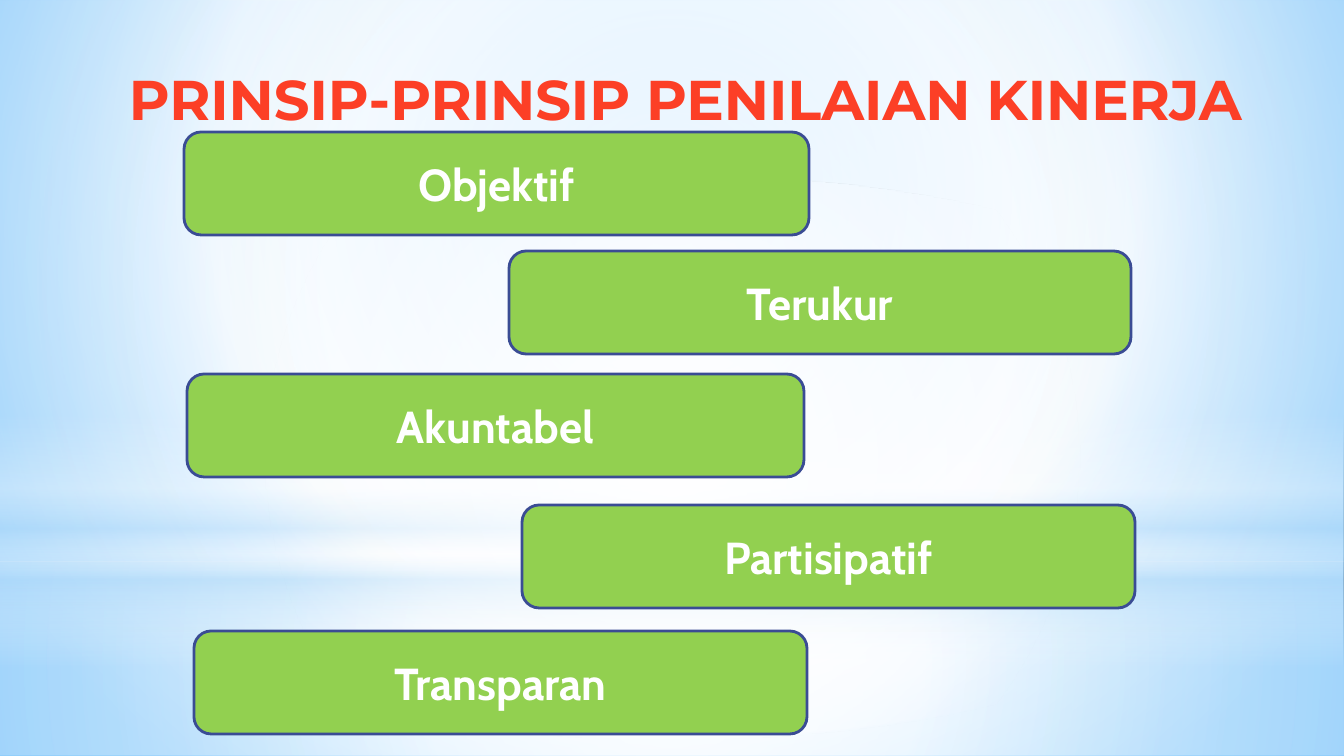
from lxml import etree
from pptx import Presentation
from pptx.dml.color import RGBColor
from pptx.enum.shapes import MSO_SHAPE
from pptx.enum.text import MSO_ANCHOR, PP_ALIGN
from pptx.oxml.ns import qn
from pptx.util import Emu, Pt

RECTANGLE = MSO_SHAPE.RECTANGLE
ROUNDED = MSO_SHAPE.ROUNDED_RECTANGLE
OVAL = MSO_SHAPE.OVAL
CENTER = PP_ALIGN.CENTER
MIDDLE = MSO_ANCHOR.MIDDLE
BOTTOM = MSO_ANCHOR.BOTTOM

EMU_PER_PX = 914400 / 100.8
WIDTH, HEIGHT = 1344, 756
CARD_HEIGHT = 103
CENTERED = (50, 50, 50, 50)

GLOWS = [
    (RECTANGLE, (0, 562, WIDTH, 194),
     [(0, "FFFFFF", 91), (37, "FFFFFF", 76), (100, "B4DCFA", 79)], CENTERED),
    (RECTANGLE, (0, 0, WIDTH, 562),
     [(0, "FFFFFF", 89), (48, "FFFFFF", 62), (100, "B4DCFA", 79)], CENTERED),
    (RECTANGLE, (0, 415, WIDTH, 252),
     [(0, "FFFFFF", 0), (29, "FFFFFF", 30), (45, "B4DCFA", 40),
      (55, "FFFFFF", 26), (65, "B4DCFA", 60), (100, "FFFFFF", 0)], None),
    (OVAL, (0, 176, WIDTH, 562),
     [(0, "FFFFFF", 100), (56, "FFFFFF", 0)], CENTERED),
]

PRINCIPLES = [
    ("Objektif", 184, 132, 625),
    ("Terukur", 509, 251, 622),
    ("Akuntabel", 187, 374, 617),
    ("Partisipatif", 522, 505, 613),
    ("Transparan", 194, 631, 613),
]


def px(length):
    return Emu(round(length * EMU_PER_PX))


def color(value):
    return RGBColor.from_string(value)


def write_text(shape, text, font, size, fill, anchor=MIDDLE, spacing=None):
    frame = shape.text_frame
    frame.word_wrap = True
    frame.vertical_anchor = anchor
    paragraph = frame.paragraphs[0]
    paragraph.alignment = CENTER
    if spacing:
        paragraph.line_spacing = spacing
    run = paragraph.add_run()
    run.text = text
    run.font.name = font
    run.font.size = Pt(size)
    run.font.bold = True
    run.font.color.rgb = color(fill)


class PrincipleSlide:
    """Hold the slide and its style, and draw each kind of element."""

    card_fill = "92D050"
    card_line = "3A4C94"
    card_text = "FFFFFF"
    title_text = "FC3F26"

    def __init__(self, presentation):
        self.slide = presentation.slides.add_slide(presentation.slide_layouts[6])

    def gradient(self, fill, element, stops, focus):
        fill.gradient()
        gradient = element.find(".//" + qn("a:gradFill"))
        for child in list(gradient):
            gradient.remove(child)
        stop_list = etree.SubElement(gradient, qn("a:gsLst"))
        for position, value, opacity in stops:
            stop = etree.SubElement(stop_list, qn("a:gs"), pos=str(position * 1000))
            shade = etree.SubElement(stop, qn("a:srgbClr"), val=value)
            etree.SubElement(shade, qn("a:alpha"), val=str(opacity * 1000))
        if focus:
            route = etree.SubElement(gradient, qn("a:path"))
            route.set("path", "circle")
            sides = {side: str(share * 1000) for side, share in zip("ltrb", focus)}
            etree.SubElement(route, qn("a:fillToRect"), sides)
        else:
            etree.SubElement(gradient, qn("a:lin"), ang="5400000", scaled="0")

    def background(self, stops, focus):
        self.gradient(self.slide.background.fill, self.slide.element, stops, focus)

    def shape(self, kind, box):
        shape = self.slide.shapes.add_shape(kind, *map(px, box))
        shape.shadow.inherit = False
        return shape

    def glow(self, kind, box, stops, focus):
        shape = self.shape(kind, box)
        shape.line.fill.background()
        self.gradient(shape.fill, shape.element, stops, focus)

    def card(self, text, left, top, width):
        shape = self.shape(ROUNDED, (left, top, width, CARD_HEIGHT))
        shape.fill.solid()
        shape.fill.fore_color.rgb = color(self.card_fill)
        shape.line.color.rgb = color(self.card_line)
        shape.line.width = Pt(2)
        write_text(shape, text, font="Cabin", size=32, fill=self.card_text)

    def title(self, text, box):
        shape = self.slide.shapes.add_textbox(*map(px, box))
        frame = shape.text_frame
        frame.margin_left = frame.margin_right = 0
        frame.margin_top = frame.margin_bottom = 0
        write_text(shape, text, font="Montserrat", size=40,
                   fill=self.title_text, anchor=BOTTOM, spacing=1.6)


def main():
    presentation = Presentation()
    presentation.slide_width = px(WIDTH)
    presentation.slide_height = px(HEIGHT)
    page = PrincipleSlide(presentation)
    page.background([(0, "9ED5FF", 100), (60, "FFFFFF", 100), (100, "5BB9FF", 100)],
                    (20, 10, 20, 60))
    for glow in GLOWS:
        page.glow(*glow)
    for principle in PRINCIPLES:
        page.card(*principle)
    page.title("PRINSIP-PRINSIP PENILAIAN KINERJA", (85, -3, 1201, 135))
    presentation.save("out.pptx")


if __name__ == "__main__":
    main()
